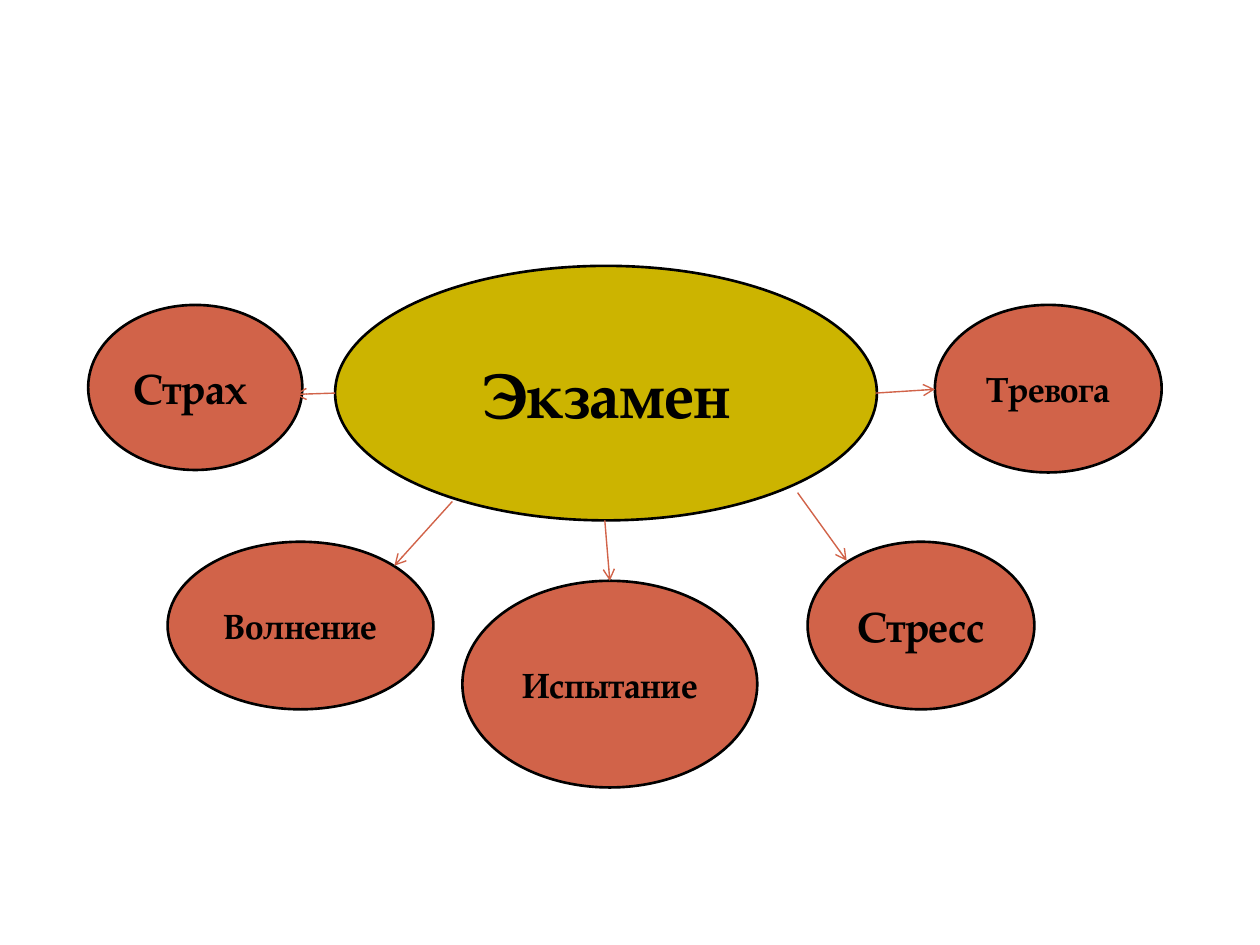
from lxml.etree import SubElement
from pptx import Presentation
from pptx.dml.color import RGBColor
from pptx.enum.shapes import MSO_CONNECTOR, MSO_SHAPE
from pptx.enum.text import MSO_ANCHOR, PP_ALIGN
from pptx.oxml.ns import qn
from pptx.util import Inches, Pt

FONT = "TeX Gyre Pagella"
COLORS = {"exam": "CCB400", "feeling": "D16349", "ink": "000000"}

# text, (left, top, width, height), font size
EXAM = ("Экзамен", (2.66, 2.11, 4.3, 2.02), 36)
FEELINGS = [
    ("Страх ", (0.7, 2.42, 1.7, 1.31), 24),
    ("Волнение", (1.33, 4.3, 2.11, 1.33), 20),
    ("Испытание", (3.67, 4.61, 2.34, 1.64), 20),
    ("Стресс", (6.41, 4.3, 1.8, 1.33), 24),
    ("Тревога", (7.42, 2.42, 1.8, 1.33), 20),
]
# start x, y, end x, y
ARROWS = [
    (2.66, 3.12, 2.34, 3.13),
    (3.59, 3.98, 3.13, 4.49),
    (4.8, 4.13, 4.84, 4.61),
    (6.33, 3.91, 6.72, 4.45),
    (6.95, 3.12, 7.42, 3.09),
]


def color(name):
    return RGBColor.from_string(COLORS[name])


def add_bubble(slide, text, box, size, fill):
    sp = slide.shapes.add_shape(MSO_SHAPE.OVAL, *map(Inches, box))
    sp.shadow.inherit = False
    sp.fill.solid()
    sp.fill.fore_color.rgb = color(fill)
    sp.line.color.rgb = color("ink")
    sp.line.width = Pt(1.5)
    tf = sp.text_frame
    tf.word_wrap = True
    tf.vertical_anchor = MSO_ANCHOR.MIDDLE
    tf.text = text
    p = tf.paragraphs[0]
    p.alignment = PP_ALIGN.CENTER
    font = p.runs[0].font
    font.name = FONT
    font.size = Pt(size)
    font.bold = True
    font.color.rgb = color("ink")


def add_arrow(slide, ends):
    cxn = slide.shapes.add_connector(MSO_CONNECTOR.STRAIGHT, *map(Inches, ends))
    cxn.line.color.rgb = color("feeling")
    cxn.line.width = Pt(0.79)
    SubElement(cxn.line._get_or_add_ln(), qn("a:tailEnd"), type="arrow")
    SubElement(cxn._element.spPr, qn("a:effectLst"))


def main():
    prs = Presentation()
    prs.slide_width, prs.slide_height = Inches(10), Inches(7.5)
    slide = prs.slides.add_slide(prs.slide_layouts[6])
    add_bubble(slide, *EXAM, "exam")
    for feeling in FEELINGS:
        add_bubble(slide, *feeling, "feeling")
    for ends in ARROWS:
        add_arrow(slide, ends)
    prs.save("out.pptx")


if __name__ == "__main__":
    main()
